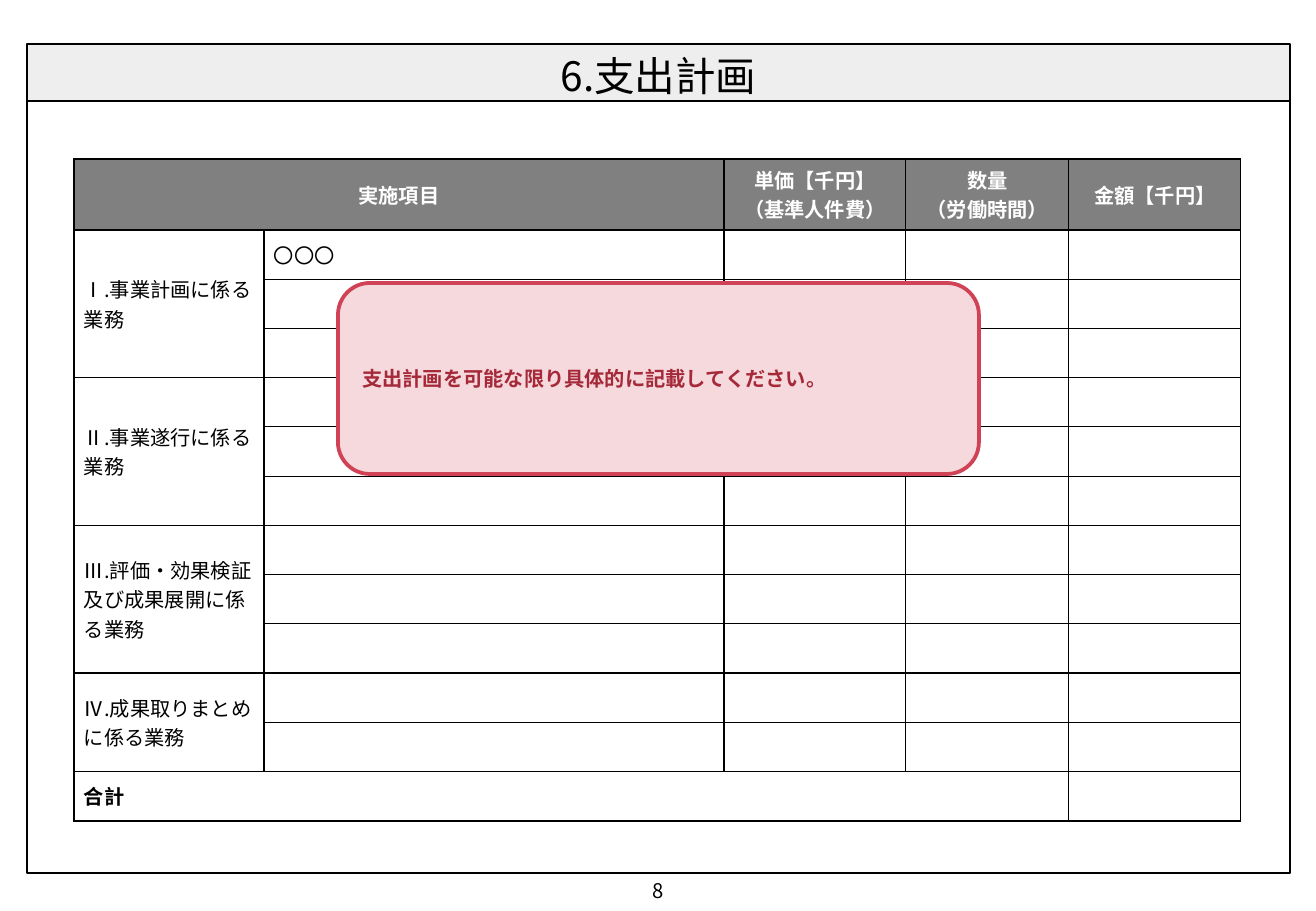
from lxml.etree import SubElement
from pptx import Presentation
from pptx.dml.color import RGBColor
from pptx.enum.shapes import MSO_SHAPE as Shape
from pptx.enum.text import MSO_ANCHOR as Anchor, PP_ALIGN as Align
from pptx.oxml.ns import qn
from pptx.util import Pt

FONT = "Noto Sans CJK JP"
BLACK = RGBColor(0x00, 0x00, 0x00)
WHITE = RGBColor(0xFF, 0xFF, 0xFF)
PALE = RGBColor(0xEE, 0xEE, 0xEE)
GRAY = RGBColor(0x80, 0x80, 0x80)
PINK = RGBColor(0xF6, 0xD9, 0xDD)
RED = RGBColor(0xD0, 0x42, 0x55)
WINE = RGBColor(0xA5, 0x29, 0x39)

COLS = [190, 460, 182, 163, 172]
HEADS = {0: "実施項目", 2: "単価【千円】\n（基準人件費）",
         3: "数量\n（労働時間）", 4: "金額【千円】"}
GROUPS = [("Ⅰ.事業計画に係る業務", 3), ("Ⅱ.事業遂行に係る業務", 3),
          ("Ⅲ.評価・効果検証及び成果展開に係る業務", 3),
          ("Ⅳ.成果取りまとめに係る業務", 2)]


def px(n):
    """Turn pixels into EMU."""
    return n * 7526


def write(frame, text, size=12, color=BLACK, bold=False, align=Align.LEFT):
    """Fill a text frame with evenly styled paragraphs."""
    frame.word_wrap = True
    frame.text = text
    for para in frame.paragraphs:
        para.alignment = align
        font = para.font
        font.name, font.size, font.bold = FONT, Pt(size), bold
        font.color.rgb = color
        base = para._p.pPr.find(qn("a:defRPr"))
        SubElement(base, qn("a:ea"), typeface=FONT)


def inset(item, side, top, base):
    """Set the inner margins of a frame or cell."""
    item.margin_left = item.margin_right = px(side)
    item.margin_top, item.margin_bottom = px(top), px(base)


def add_box(slide, box, fill, line=BLACK, width=0.75, kind=Shape.RECTANGLE):
    """Draw a filled and outlined shape."""
    shape = slide.shapes.add_shape(kind, *map(px, box))
    shape.shadow.inherit = False
    shape.fill.solid()
    shape.fill.fore_color.rgb = fill
    shape.line.color.rgb = line
    shape.line.width = Pt(width)
    return shape


def add_page(slide, box):
    """Draw the title bar, the body frame and the page number."""
    left, top, wide, high = box
    bar = 57
    title = add_box(slide, (left, top, wide, bar), PALE).text_frame
    inset(title, 10, 10, 5)
    title.vertical_anchor = Anchor.MIDDLE
    write(title, "6.支出計画", 24, align=Align.CENTER)
    add_box(slide, (left, top + bar, wide, high - bar), WHITE)
    spot = (left + (wide - 62) // 2, top + high, 62, 34)
    number = slide.shapes.add_textbox(*map(px, spot)).text_frame
    number.vertical_anchor = Anchor.MIDDLE
    write(number, "8", align=Align.CENTER)


def add_edges(cell, sides):
    """Draw the borders of a cell from side and width pairs."""
    props = cell._tc.get_or_add_tcPr()
    for side, width in sides.items():
        line = SubElement(props, qn(f"a:ln{side}"), w=str(Pt(width)))
        fill = SubElement(line, qn("a:solidFill"))
        SubElement(fill, qn("a:srgbClr"), val=str(BLACK))


def add_plan(slide, box):
    """Build the spending table."""
    left, top, wide, high = box
    head, last = 71, 12
    table = slide.shapes.add_table(last + 1, len(COLS), *map(px, box)).table
    table.horz_banding = False
    for col, size in zip(table.columns, COLS):
        col.width = px(size)
    for i, row in enumerate(table.rows):
        row.height = px(head) if i == 0 else px(high - head) // last
    texts = {(0, col): text for col, text in HEADS.items()}
    texts |= {(1, 1): "〇〇〇", (last, 0): "合計"}
    table.cell(0, 0).merge(table.cell(0, 1))
    table.cell(last, 0).merge(table.cell(last, 3))
    start = 1
    for name, count in GROUPS:
        texts[start, 0] = name
        table.cell(start, 0).merge(table.cell(start + count - 1, 0))
        start += count
    for i in range(last + 1):
        for j in range(len(COLS)):
            cell = table.cell(i, j)
            inset(cell, 10, 6, 6)
            cell.vertical_anchor = Anchor.MIDDLE
            add_edges(cell, {"L": 0.75, "R": 0.75,
                             "T": 1.5 if i == 0 else 0.75,
                             "B": 1.5 if i == last else 0.75})
            cell.fill.solid()
            cell.fill.fore_color.rgb = GRAY if i == 0 else WHITE
            write(cell.text_frame, texts.get((i, j), ""),
                  color=WHITE if i == 0 else BLACK, bold=i in (0, last),
                  align=Align.CENTER if i == 0 else Align.LEFT)


def add_note(slide, box):
    """Draw the rounded instruction note."""
    shape = add_box(slide, box, PINK, RED, 2.25, Shape.ROUNDED_RECTANGLE)
    frame = shape.text_frame
    inset(frame, 15, 5, 5)
    frame.vertical_anchor = Anchor.MIDDLE
    write(frame, "支出計画を可能な限り具体的に記載してください。",
          color=WINE, bold=True)


def main():
    """Build and save the slide."""
    deck = Presentation()
    deck.slide_width, deck.slide_height = px(1316), px(911)
    slide = deck.slides.add_slide(deck.slide_layouts[6])
    add_page(slide, (27, 44, 1263, 829))
    add_plan(slide, (74, 159, sum(COLS), 662))
    add_note(slide, (338, 283, 641, 191))
    deck.save("out.pptx")


if __name__ == "__main__":
    main()
